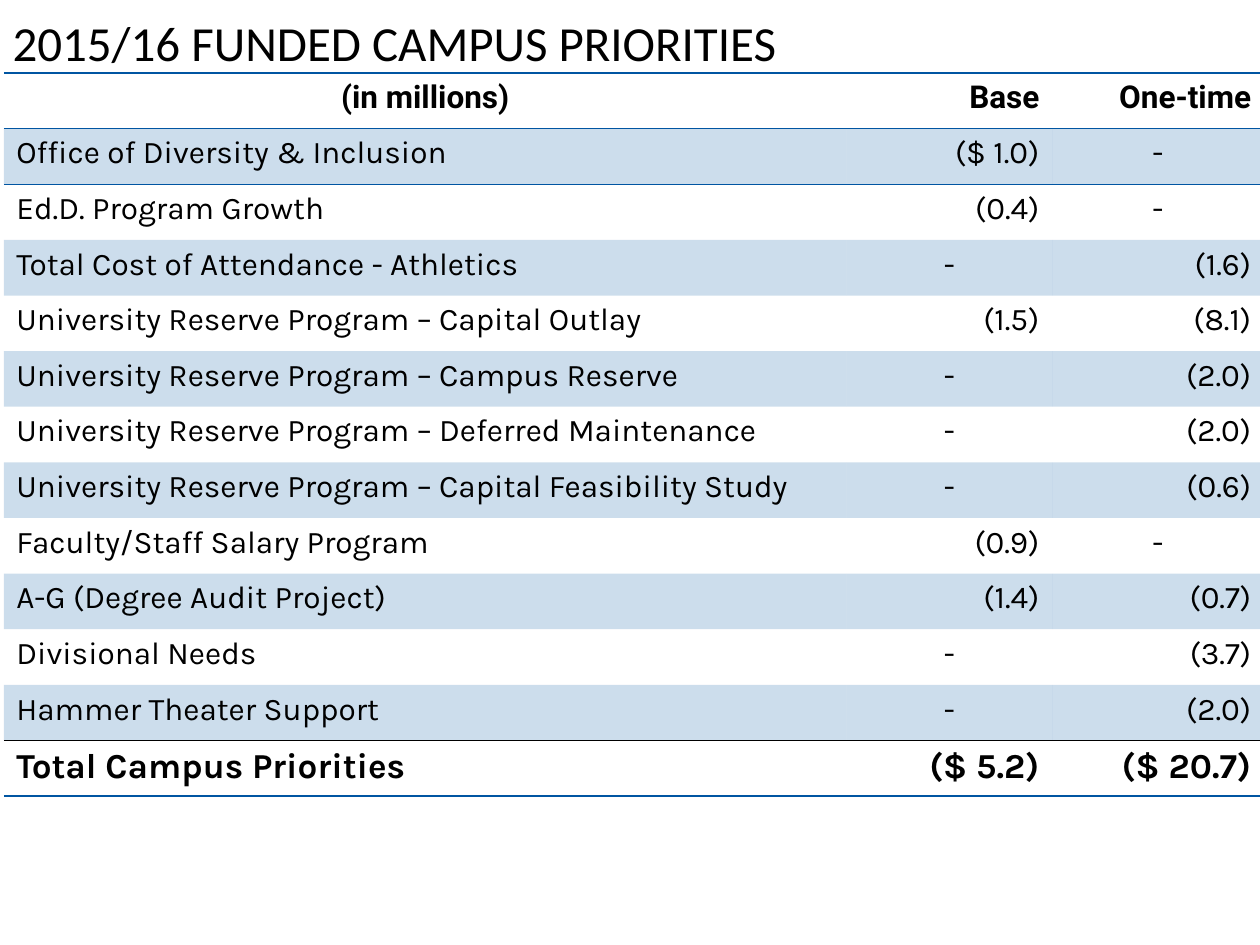
from lxml import etree
from pptx import Presentation
from pptx.dml.color import RGBColor
from pptx.enum.text import MSO_ANCHOR, PP_ALIGN
from pptx.oxml.ns import qn
from pptx.util import Inches, Pt

LEFT, CENTER, RIGHT = PP_ALIGN.LEFT, PP_ALIGN.CENTER, PP_ALIGN.RIGHT
MIDDLE = MSO_ANCHOR.MIDDLE
BLACK = RGBColor(0x00, 0x00, 0x00)
BLUE = RGBColor(0x00, 0x55, 0xA2)
PLAIN_TABLE_STYLE = "{2D5ABB26-0587-4C30-8999-92F81FD0307C}"

ROWS = [
    ("(in millions)", "Base", "One-time"),
    ("Office of Diversity & Inclusion", "($ 1.0)", "-"),
    ("Ed.D. Program Growth", "(0.4)", "-"),
    ("Total Cost of Attendance - Athletics", "-", "(1.6)"),
    ("University Reserve Program – Capital Outlay", "(1.5)", "(8.1)"),
    ("University Reserve Program – Campus Reserve", "-", "(2.0)"),
    ("University Reserve Program – Deferred Maintenance", "-", "(2.0)"),
    ("University Reserve Program – Capital Feasibility Study", "-", "(0.6)"),
    ("Faculty/Staff Salary Program", "(0.9)", "-"),
    ("A-G (Degree Audit Project)", "(1.4)", "(0.7)"),
    ("Divisional Needs", "-", "(3.7)"),
    ("Hammer Theater Support", "-", "(2.0)"),
    ("Total Campus Priorities", "($ 5.2)", "($ 20.7)"),
]
COLUMN_WIDTHS = [6.69, 1.63, 1.68]
LAST = len(ROWS) - 1
# Row index -> colours of its top and bottom rules
RULES = {
    0: {"a:lnT": BLUE, "a:lnB": BLUE},
    1: {"a:lnT": BLUE},
    LAST - 1: {"a:lnB": BLACK},
    LAST: {"a:lnT": BLACK, "a:lnB": BLUE},
}


def write_text(frame, text, font="Karla", size=18, bold=False, align=LEFT):
    para = frame.paragraphs[0]
    para.alignment = align
    span = para.add_run()
    span.text = text
    span.font.name = font
    span.font.size = Pt(size)
    span.font.bold = bold
    span.font.color.rgb = BLACK


def add_rule(cell, side, color):
    line = etree.SubElement(cell._tc.get_or_add_tcPr(), qn(side), w=str(Pt(1)))
    fill = etree.SubElement(line, qn("a:solidFill"))
    etree.SubElement(fill, qn("a:srgbClr"), val=str(color))


deck = Presentation()
deck.slide_width, deck.slide_height = Inches(10), Inches(7.5)
page = deck.slides.add_slide(deck.slide_layouts[5])

title = page.shapes.title
title.left, title.top = Inches(0), Inches(0.03)
title.width, title.height = Inches(8.22), Inches(0.6)
title.text_frame.vertical_anchor = MIDDLE
write_text(title.text_frame, "2015/16 FUNDED CAMPUS PRIORITIES", font="Calibri", size=28)

table = page.shapes.add_table(
    len(ROWS), len(COLUMN_WIDTHS), Inches(0.03), Inches(0.58), Inches(10), Inches(5.74)
).table
table._tbl.tblPr.find(qn("a:tableStyleId")).text = PLAIN_TABLE_STYLE
for column, width in zip(table.columns, COLUMN_WIDTHS):
    column.width = Inches(width)

for row_index, row in enumerate(ROWS):
    is_header, is_total = row_index == 0, row_index == LAST
    for column_index, text in enumerate(row):
        cell = table.cell(row_index, column_index)
        if text == "-" or (is_header and column_index == 0):
            align = CENTER
        else:
            align = RIGHT if column_index else LEFT
        write_text(
            cell.text_frame,
            text,
            font="Roboto" if is_header else "Karla",
            size=20 if is_total else 18,
            bold=is_header or is_total,
            align=align,
        )
        for side, color in RULES.get(row_index, {}).items():
            add_rule(cell, side, color)
        if row_index % 2:
            cell.fill.solid()
            cell.fill.fore_color.rgb = BLUE
            tint = cell._tc.tcPr.find(qn("a:solidFill")).find(qn("a:srgbClr"))
            etree.SubElement(tint, qn("a:alpha"), val="20000")
        else:
            cell.fill.background()

deck.save("out.pptx")
